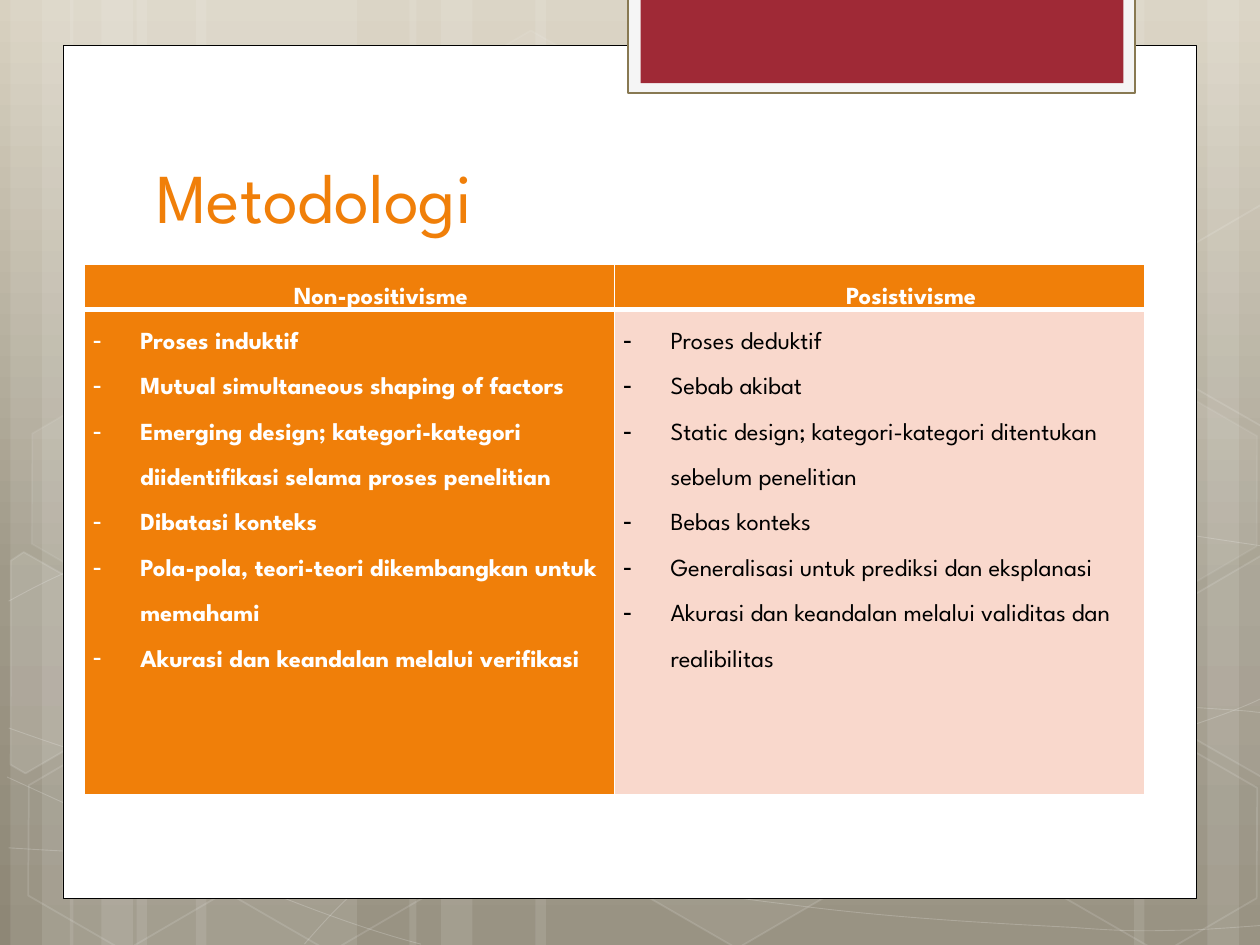
from copy import deepcopy
from math import cos, radians, sin

from lxml.etree import SubElement
from pptx import Presentation
from pptx.dml.color import RGBColor
from pptx.enum.shapes import MSO_SHAPE
from pptx.enum.text import MSO_ANCHOR, MSO_AUTO_SIZE, PP_ALIGN
from pptx.oxml import parse_xml
from pptx.oxml.ns import nsdecls, qn
from pptx.util import Pt

WHITE = RGBColor(0xFF, 0xFF, 0xFF)
BLACK = RGBColor(0x00, 0x00, 0x00)
ORANGE = RGBColor(0xF0, 0x7F, 0x09)
PINK = RGBColor(0xF9, 0xD8, 0xCC)
RED = RGBColor(0x9F, 0x29, 0x36)
PALE = RGBColor(0xF5, 0xF5, 0xF5)
BROWN = RGBColor(0x88, 0x79, 0x52)
BACKDROP = [(0, RGBColor(0xD8, 0xD1, 0xC0)), (0.62, RGBColor(0x9F, 0x99, 0x88)),
            (1, RGBColor(0x8E, 0x87, 0x76))]

# Backdrop geometry in points: vertical bands are (left, width)
BANDS = [(78, 126), (6, 36), (24, 60), (112, 126), (40, 36), (58, 60),
         (528, 126), (690, 36), (648, 60), (306, 222), (234, 36), (252, 60)]

# Each curve is its segment kinds (C curve, L straight) and its points
CURVES = [
    ("CCCC", [(5, 484.5), (44, 487), (83, 489), (137, 488), (191, 487), (258, 486), (330, 479),
              (402, 472), (504, 458), (570, 444), (636, 430.5), (703.5, 409), (725, 397)]),
    ("CCCC", [(5, 343.5), (26, 332), (47, 321), (87, 310), (128, 299.5), (186.5, 283.5),
              (250, 278.5), (314, 273.5), (391.5, 273), (471, 278.5), (550, 284.5),
              (682, 306.5), (725, 312.5)]),
    ("C", [(4, 444), (91.5, 484), (178, 523.5), (240.5, 539.5)]),
    ("CCCCCC", [(5, 416), (27.5, 424), (50.5, 432), (92, 443.5), (134, 454.5), (196.5, 472.5),
                (257, 484.5), (317, 497), (392.5, 510), (452, 517), (512, 525), (576, 528),
                (614, 530), (651.5, 533), (661.5, 531.5), (680.5, 531.5), (699, 530.5),
                (712, 529.5), (725, 528.5)]),
    ("CCCCCCCLCC", [(174, 539.5), (187, 524.5), (200, 510.5), (217.5, 497.5), (234.5, 484.5),
                    (259, 470), (279.5, 460), (299.5, 450), (312, 445.5), (338.5, 438.5),
                    (364.5, 431.5), (412.5, 421), (438, 416), (463.5, 411), (467.5, 411),
                    (489.5, 409.5), (512, 407.5), (547, 405.5), (571.5, 404.5), (597, 404),
                    (638, 404.5), (638, 404.5), (686, 404.5), (699, 405.5), (711.5, 406),
                    (718, 407), (724.5, 407.5), (722, 407), (724.5, 407.5)]),
]

# Hexagons are (left, top, fill opacity, line opacity)
HEXAGONS = [(240.5, 26, 4, 8), (358, 424, 6, 12), (8, 425.5, 0, 12), (10, 224.5, 7, 8),
            (125.5, 426, 0, 12), (542, 326, 10, 12), (600.5, 427, 0, 12), (600.5, 226, 7, 8)]
# Hexagons cut by the slide edge: points as seen, and the centre they turn about
LEFT_CUT = [(6, 320.5), (13.5, 315.5), (69, 347), (68.5, 410.5), (14.5, 442), (6, 437)]
LEFT_CENTRE = (25.9, 385.2)
RIGHT_CUT = [(666.5, 349), (720.5, 317.5), (726.5, 321), (726.5, 441.5), (721.5, 444),
             (666.5, 412.5)]
RIGHT_CENTRE = (709.2, 374.4)
TURN = 30

HEADERS = ["Non-positivisme", "Posistivisme"]
POINTS = [
    ["Proses induktif", "Mutual simultaneous shaping of factors",
     "Emerging design; kategori-kategori diidentifikasi selama proses penelitian",
     "Dibatasi konteks", "Pola-pola, teori-teori dikembangkan untuk memahami",
     "Akurasi dan keandalan melalui verifikasi"],
    ["Proses deduktif", "Sebab akibat",
     "Static design; kategori-kategori ditentukan sebelum penelitian",
     "Bebas konteks", "Generalisasi untuk prediksi dan eksplanasi",
     "Akurasi dan keandalan melalui validitas dan realibilitas"],
]


class Deck:
    font = "League Spartan"

    def __init__(self, prs):
        self.s = prs.slides.add_slide(prs.slide_layouts[5])

    def paint(self, fill, color, opacity=100):
        if color is None or opacity == 0:
            fill.background()
            return
        fill.solid()
        fill.fore_color.rgb = color
        if opacity < 100:
            clr = fill._xPr.find(qn("a:solidFill"))[0]
            SubElement(clr, qn("a:alpha")).set("val", str(opacity * 1000))

    def finish(self, sp, fill=None, opacity=100, line=None, width=1, line_opacity=100):
        sp.shadow.inherit = False
        self.paint(sp.fill, fill, opacity)
        self.paint(sp.line.fill, line, line_opacity)
        if line is not None:
            sp.line.width = Pt(width)
        return sp

    def background(self, stops):
        fill = self.s.background.fill
        fill.gradient()
        fill.gradient_angle = 270
        gs_list = self.s.element.find(".//" + qn("a:gsLst"))
        gs_list.append(deepcopy(gs_list[-1]))
        for stop, (position, color) in zip(fill.gradient_stops, stops):
            stop.position = position
            stop.color.rgb = color

    def shape(self, kind, x, y, w, h, **style):
        sp = self.s.shapes.add_shape(kind, Pt(x), Pt(y), Pt(w), Pt(h))
        return self.finish(sp, **style)

    def outline(self, points, close, **style):
        points = [(Pt(x), Pt(y)) for x, y in points]
        builder = self.s.shapes.build_freeform(*points[0])
        builder.add_line_segments(points[1:], close=close)
        return self.finish(builder.convert_to_shape(), **style)

    def curve(self, kinds, points, **style):
        sp = self.outline(points, False, **style)
        lines = iter(sp.element.findall(".//" + qn("a:lnTo")))
        for kind in kinds:
            first = next(lines)
            if kind == "C":  # merge three straight steps into one Bezier
                first.tag = qn("a:cubicBezTo")
                for _ in range(2):
                    step = next(lines)
                    first.append(step[0])
                    step.getparent().remove(step)

    def hexagon(self, x, y, opacity, line_opacity):
        sp = self.shape(MSO_SHAPE.HEXAGON, x, y, 126, 109.5, fill=WHITE, opacity=opacity,
                        line=WHITE, line_opacity=line_opacity)
        sp.adjustments[0] = 0.285
        sp.rotation = TURN

    def cut_hexagon(self, points, centre, opacity, dy=0):
        (cx, cy), c, s = centre, cos(radians(TURN)), sin(radians(TURN))
        level = [(cx + (x - cx) * c + (y - cy) * s, cy + dy - (x - cx) * s + (y - cy) * c)
                 for x, y in points]
        sp = self.outline(level + level[:1], True, fill=WHITE, opacity=opacity,
                          line=WHITE, line_opacity=12)
        sp.rotation = TURN

    def title(self, text, x, y, w, h):
        sp = self.s.shapes.title
        for name, value in {"left": x, "top": y, "width": w, "height": h}.items():
            setattr(sp, name, Pt(value))
        sp.element.getparent().append(sp.element)  # bring in front of the panel
        tf = sp.text_frame
        for name, value in {"word_wrap": True, "auto_size": MSO_AUTO_SIZE.NONE,
                            "vertical_anchor": MSO_ANCHOR.BOTTOM}.items():
            setattr(tf, name, value)
        p = tf.paragraphs[0]
        p.alignment = PP_ALIGN.LEFT
        self.run(p, text, size=Pt(40), color=ORANGE)

    def run(self, p, text, color, **fmt):
        r = p.add_run()
        r.text = text
        for name, value in {"name": self.font, **fmt}.items():
            setattr(r.font, name, value)
        r.font.color.rgb = color

    def cell(self, cell, texts, fill, color, bold, bullets, top, bottom):
        for name, value in {"margin_left": Pt(5), "margin_right": Pt(5),
                            "margin_top": 0, "margin_bottom": 0}.items():
            setattr(cell, name, value)
        self.paint(cell.fill, fill)
        for i, (tag, width) in enumerate({"lnL": 1, "lnR": 1, "lnT": top, "lnB": bottom}.items()):
            cell._tc.tcPr.insert(i, parse_xml(
                f'<a:{tag} {nsdecls("a")} w="{Pt(width)}"><a:solidFill>'
                f'<a:srgbClr val="{WHITE}"/></a:solidFill></a:{tag}>'))
        tf = cell.text_frame
        for i, text in enumerate(texts):
            p = tf.add_paragraph() if i else tf.paragraphs[0]
            p.line_spacing = 2.0
            p.alignment = PP_ALIGN.LEFT if bullets else PP_ALIGN.CENTER
            pPr = p._p.get_or_add_pPr()
            pPr.set("marL", str(Pt(27 if bullets else 36)))
            pPr.set("indent", str(Pt(-27 if bullets else 0)))
            if bullets:
                SubElement(pPr, qn("a:buChar")).set("char", "-")
            self.run(p, text, color, size=Pt(14), bold=bold)

    def table(self, x, y, col_width, row_heights):
        table = self.s.shapes.add_table(2, 2, Pt(x), Pt(y), Pt(2 * col_width),
                                        Pt(sum(row_heights))).table
        for row, height in zip(table.rows, row_heights):
            row.height = Pt(height)
        for c, (fill, color, bold) in enumerate([(ORANGE, WHITE, True), (PINK, BLACK, False)]):
            table.columns[c].width = Pt(col_width)
            self.cell(table.cell(0, c), [HEADERS[c]], ORANGE, WHITE, True, False, 1, 3)
            self.cell(table.cell(1, c), POINTS[c], fill, color, bold, True, 3, 1)


def main():
    prs = Presentation()
    prs.slide_width, prs.slide_height = Pt(720), Pt(540)
    deck = Deck(prs)

    # Backdrop: gradient, bands, curves and hexagons
    deck.background(BACKDROP)
    for x, w in BANDS:
        deck.shape(MSO_SHAPE.RECTANGLE, x, 0, w, 540, fill=WHITE, opacity=10)
    for kinds, points in CURVES:
        deck.curve(kinds, points, line=WHITE, width=0.5, line_opacity=20)
    for hexagon in HEXAGONS[:2]:
        deck.hexagon(*hexagon)
    deck.cut_hexagon(LEFT_CUT, LEFT_CENTRE, 10)
    for hexagon in HEXAGONS[2:]:
        deck.hexagon(*hexagon)
    deck.cut_hexagon(RIGHT_CUT, RIGHT_CENTRE, 4)
    deck.cut_hexagon(RIGHT_CUT, RIGHT_CENTRE, 0, dy=-200.5)

    # White panel and red tab
    deck.shape(MSO_SHAPE.RECTANGLE, 36, 26, 648, 487.2, fill=WHITE, line=BLACK, width=0.5)
    deck.shape(MSO_SHAPE.RECTANGLE, 359, -1.5, 289.7, 54.7, fill=PALE, line=BROWN, width=1.25)
    deck.shape(MSO_SHAPE.RECTANGLE, 366, -1.5, 276, 49, fill=RED)

    # Title and comparison table
    deck.title("Metodologi", 82, 81, 553, 58.3)
    deck.table(48.2, 151, 303, (26, 277))
    prs.save("out.pptx")


if __name__ == "__main__":
    main()
